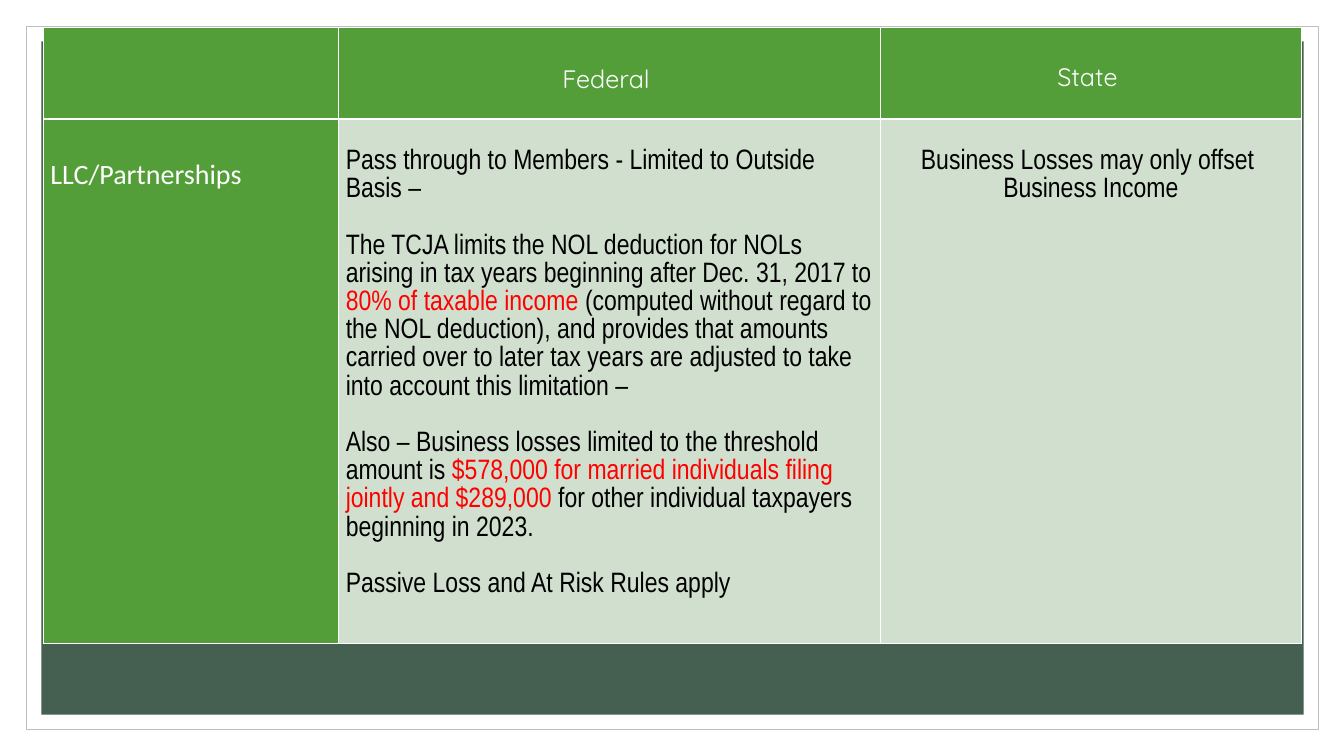
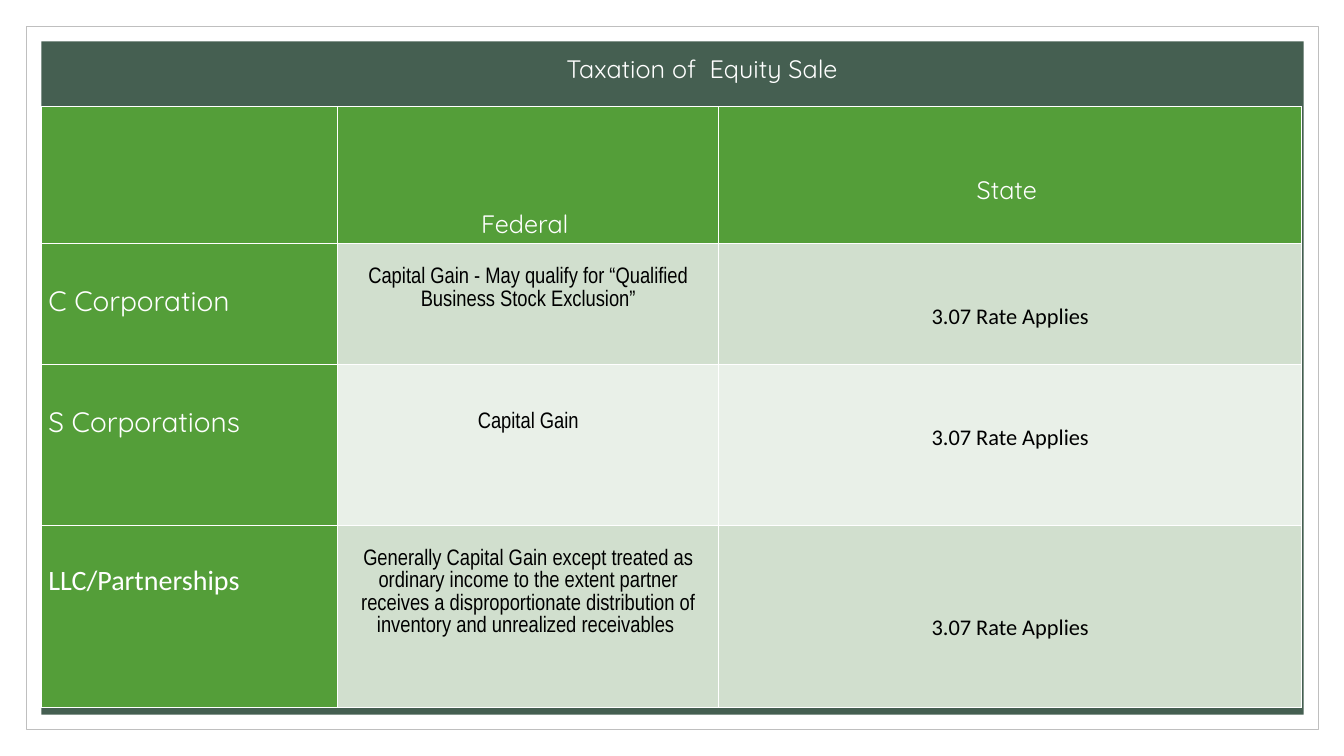
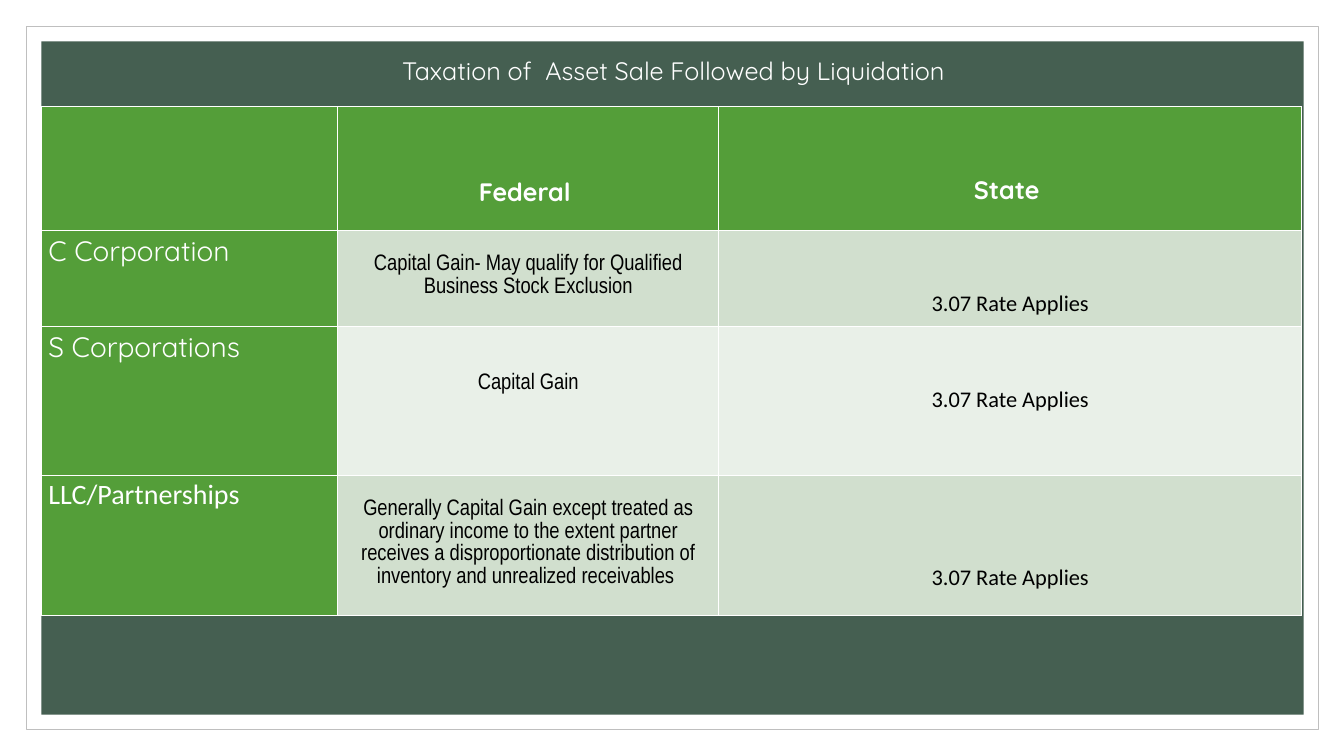
from dataclasses import dataclass

from lxml import etree
from pptx import Presentation
from pptx.dml.color import RGBColor
from pptx.enum.shapes import MSO_SHAPE
from pptx.enum.text import MSO_AUTO_SIZE, PP_ALIGN
from pptx.oxml.ns import qn
from pptx.util import Inches, Pt

RECTANGLE = MSO_SHAPE.RECTANGLE
LEFT, CENTER = PP_ALIGN.LEFT, PP_ALIGN.CENTER
GROW_TO_TEXT = MSO_AUTO_SIZE.SHAPE_TO_FIT_TEXT


# Colours, fonts and type sizes shared by all slides
@dataclass(frozen=True)
class Theme:
    white: str = "FFFFFF"
    black: str = "000000"
    red: str = "FF0000"
    frame_line: str = "BFBFBF"
    panel: str = "455F51"
    header: str = "549E39"
    band_dark: str = "D1DFCE"
    band_light: str = "E9F0E8"
    heading_font: str = "Quicksand"
    label_font: str = "Calibri"
    body_font: str = "Arial Narrow"
    heading_size: int = 18
    large_size: int = 20
    small_size: int = 16
    line_spacing: float = 1.07
    paragraph_gap: float = 20.1


THEME = Theme()


@dataclass(frozen=True)
class Style:
    font: str
    size: int
    color: str
    align: int = CENTER
    bold: bool = False


HEADING = Style(THEME.heading_font, THEME.heading_size, THEME.white)
BOLD_HEADING = Style(THEME.heading_font, THEME.heading_size, THEME.white, bold=True)
TITLE = Style(THEME.heading_font, THEME.heading_size, THEME.white, LEFT)
ENTITY = Style(THEME.heading_font, THEME.large_size, THEME.white, LEFT)
LLC_ENTITY = Style(THEME.label_font, THEME.large_size, THEME.white, LEFT)
RULES = Style(THEME.body_font, THEME.large_size, THEME.black, LEFT)
STATE_RULE = Style(THEME.body_font, THEME.large_size, THEME.black)
TREATMENT = Style(THEME.body_font, THEME.small_size, THEME.black)
RATE = Style(THEME.label_font, THEME.small_size, THEME.black)


# A paragraph is a list of (text, colour) spans; a colour of None keeps the style's
@dataclass(frozen=True)
class Entry:
    style: Style
    top: float
    paragraphs: list


def entry(style, top, text):
    return Entry(style, top, [[(text, None)]])


def rgb(color):
    return RGBColor.from_string(color)


def add_run(paragraph, text, style, color=None):
    run = paragraph.add_run()
    run.text = text
    formats = {"name": style.font, "size": Pt(style.size), "bold": style.bold}
    for attribute, value in formats.items():
        setattr(run.font, attribute, value)
    run.font.color.rgb = rgb(color or style.color)


def add_panel(slide, left, top, width, height, fill, line=None):
    panel = slide.shapes.add_shape(
        RECTANGLE, Inches(left), Inches(top), Inches(width), Inches(height))
    panel.shadow.inherit = False
    panel.fill.solid()
    panel.fill.fore_color.rgb = rgb(fill)
    if line:
        panel.line.color.rgb = rgb(line)
        panel.line.width = Pt(0.5)
    else:
        panel.line.fill.background()


def add_framed_slide(prs):
    slide = prs.slides.add_slide(prs.slide_layouts[6])
    add_panel(slide, 0.26, 0.26, 12.82, 6.98, THEME.white, THEME.frame_line)
    add_panel(slide, 0.41, 0.41, 12.52, 6.68, THEME.panel)
    return slide


def add_title(slide, left, top, width, text):
    box = slide.shapes.add_textbox(Inches(left), Inches(top), Inches(width), Inches(0.4))
    frame = box.text_frame
    frame.word_wrap = False
    frame.auto_size = GROW_TO_TEXT
    add_run(frame.paragraphs[0], text, TITLE)


def set_borders(cell):
    properties = cell._tc.get_or_add_tcPr()
    for side in ("a:lnL", "a:lnR", "a:lnT", "a:lnB"):
        line = etree.SubElement(properties, qn(side), w=str(Pt(1)))
        fill = etree.SubElement(line, qn("a:solidFill"))
        etree.SubElement(fill, qn("a:srgbClr"), val=THEME.white)


def fill_cell(cell, content):
    margins = {"margin_left": 0.07, "margin_right": 0.07,
               "margin_top": content.top, "margin_bottom": 0}
    for attribute, value in margins.items():
        setattr(cell, attribute, Inches(value))
    frame = cell.text_frame
    for index, spans in enumerate(content.paragraphs):
        paragraph = frame.add_paragraph() if index else frame.paragraphs[0]
        paragraph.alignment = content.style.align
        paragraph.line_spacing = THEME.line_spacing
        if index:
            paragraph.space_before = Pt(THEME.paragraph_gap)
        for text, color in spans:
            for number, line in enumerate(text.split("\n")):
                if number:
                    paragraph.add_line_break()
                add_run(paragraph, line, content.style, color)


def cell_color(row, column):
    if row == 0 or column == 0:
        return THEME.header
    return THEME.band_dark if row % 2 else THEME.band_light


def add_tax_table(slide, left, top, widths, heights, rows):
    table = slide.shapes.add_table(
        len(heights), len(widths), Inches(left), Inches(top),
        Inches(sum(widths)), Inches(sum(heights))).table
    table.first_row = table.horz_banding = False
    for column, width in zip(table.columns, widths):
        column.width = Inches(width)
    for row, height in zip(table.rows, heights):
        row.height = Inches(height)
    for r, contents in enumerate(rows):
        for c, content in enumerate(contents):
            cell = table.cell(r, c)
            set_borders(cell)
            cell.fill.solid()
            cell.fill.fore_color.rgb = rgb(cell_color(r, c))
            if content:
                fill_cell(cell, content)


def header_row(style, federal_top, state_top):
    return [None, entry(style, federal_top, "Federal "), entry(style, state_top, "State ")]


# Loss limits for partnerships
def add_loss_slide(prs):
    federal_rules = [
        [("Pass through to Members - Limited to Outside Basis –", None)],
        [("The TCJA limits the NOL deduction for NOLs arising in tax years "
          "beginning after Dec. 31, 2017 to ", None),
         ("80% of taxable income ", THEME.red),
         ("(computed without regard to the NOL deduction), and provides that "
          "amounts carried over to later tax years are adjusted to take into "
          "account this limitation –", None)],
        [("Also – Business losses limited to the threshold amount is ", None),
         ("$578,000 for married individuals filing jointly and $289,000 ", THEME.red),
         ("for other individual taxpayers beginning in 2023.", None)],
        [("Passive Loss and At Risk Rules apply", None)],
    ]
    rows = [
        header_row(HEADING, 0.34, 0.32),
        [entry(LLC_ENTITY, 0.36, "LLC/Partnerships"),
         Entry(RULES, 0.28, federal_rules),
         entry(STATE_RULE, 0.28, "Business Losses may only offset \nBusiness Income")],
    ]
    add_tax_table(add_framed_slide(prs), 0.43, 0.27, [2.93, 5.37, 4.18], [0.91, 5.2], rows)


# Sale comparison: one row per kind of entity
def add_sale_slide(prs, title, heights, header, entity_tops, stock_gain):
    slide = add_framed_slide(prs)
    entities = [
        (ENTITY, "C Corporation", 0.22, stock_gain, 0.57),
        (ENTITY, "S Corporations", 0.45, "Capital Gain", 0.57),
        (LLC_ENTITY, "LLC/Partnerships", 0.22,
         "Generally Capital Gain except treated as ordinary income to the extent "
         "partner receives a disproportionate distribution of inventory and "
         "unrealized receivables ", 0.86),
    ]
    rows = [header]
    for entity_top, (style, name, federal_top, federal, state_top) in zip(entity_tops, entities):
        rows.append([entry(style, entity_top, name),
                     entry(TREATMENT, federal_top, federal),
                     entry(RATE, state_top, "3.07 Rate Applies")])
    add_tax_table(slide, 0.41, 1.06, [2.94, 3.78, 5.78], heights, rows)
    add_title(slide, *title)


def main():
    prs = Presentation()
    prs.slide_width, prs.slide_height = Inches(13.33), Inches(7.5)
    add_loss_slide(prs)
    add_sale_slide(
        prs, (5.52, 0.48, 3, "Taxation of  Equity Sale"),
        [1.36, 1.2, 1.59, 1.81], header_row(HEADING, 0.99, 0.65), [0.37, 0.37, 0.36],
        "Capital Gain - May qualify for “Qualified Business Stock Exclusion”")
    add_sale_slide(
        prs, (3.89, 0.5, 5.87, "Taxation of  Asset Sale Followed by Liquidation"),
        [1.23, 0.95, 1.48, 1.39], header_row(BOLD_HEADING, 0.67, 0.65), [0, 0, 0],
        "Capital Gain- May qualify for Qualified Business Stock Exclusion")
    prs.save("out.pptx")


if __name__ == "__main__":
    main()
